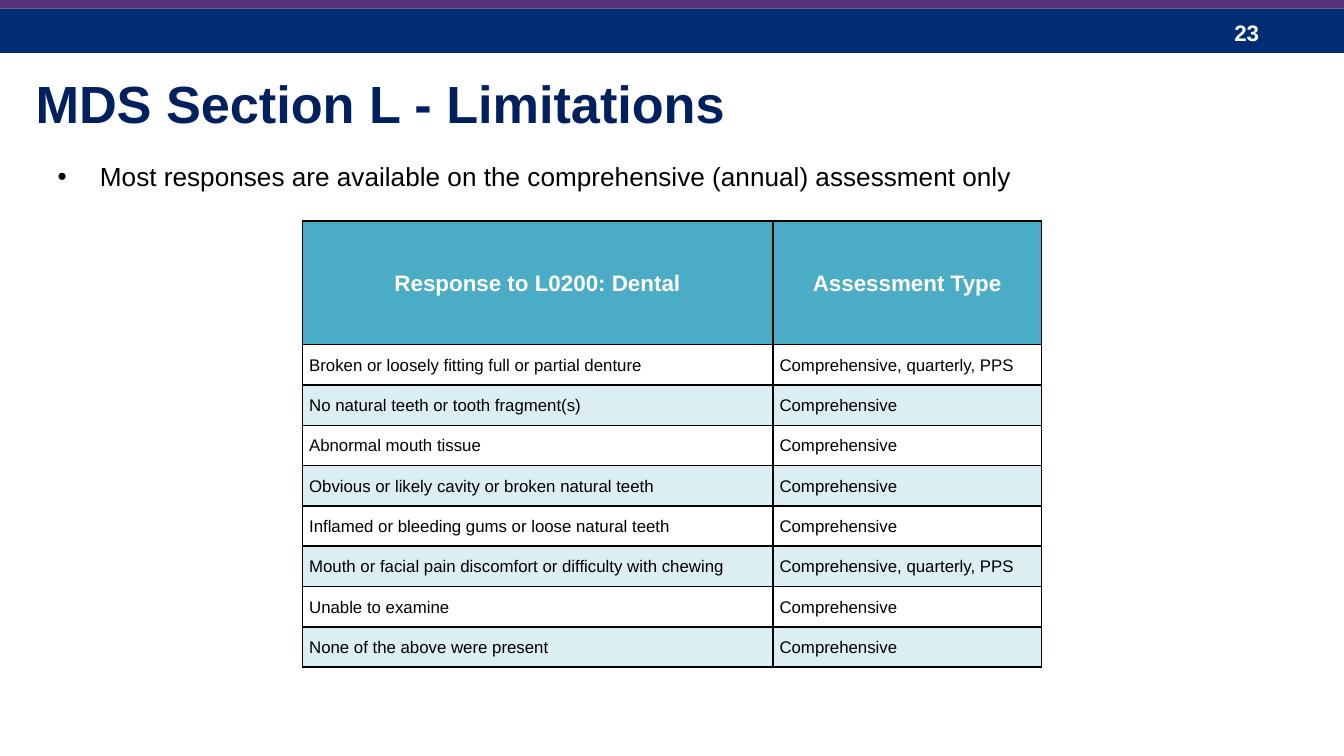
from lxml import etree
from pptx import Presentation
from pptx import util as u
from pptx.dml.color import RGBColor
from pptx.enum import shapes, text
from pptx.oxml import ns

PX = 4572
SLIDE_WIDTH, SLIDE_HEIGHT = 2000, 1125
FONT = "Arial"
WHITE = RGBColor(0xFF, 0xFF, 0xFF)
BLACK = RGBColor(0, 0, 0)
NAVY = RGBColor(0x00, 0x20, 0x60)
BANNER_BLUE = RGBColor(0x00, 0x2D, 0x73)
PURPLE = RGBColor(0x55, 0x32, 0x78)
TEAL = RGBColor(0x4B, 0xAC, 0xC6)
PALE_TEAL = RGBColor(0xDB, 0xEE, 0xF4)

HEADINGS = ("Response to L0200: Dental", "Assessment Type")
ANNUAL = "Comprehensive"
ALL_TYPES = "Comprehensive, quarterly, PPS"
RESPONSES = [
    ("Broken or loosely fitting full or partial denture", ALL_TYPES),
    ("No natural teeth or tooth fragment(s)", ANNUAL),
    ("Abnormal mouth tissue", ANNUAL),
    ("Obvious or likely cavity or broken natural teeth", ANNUAL),
    ("Inflamed or bleeding gums or loose natural teeth", ANNUAL),
    ("Mouth or facial pain discomfort or difficulty with chewing", ALL_TYPES),
    ("Unable to examine", ANNUAL),
    ("None of the above were present", ANNUAL),
]


def px(*lengths):
    return [u.Emu(length * PX) for length in lengths]


def style(paragraph, size, color, bold=False, align=text.PP_ALIGN.LEFT):
    paragraph.alignment = align
    font = paragraph.font
    font.name, font.size, font.bold = FONT, u.Pt(size), bold
    font.color.rgb = color


def add_band(slide, top, height, color):
    band = slide.shapes.add_shape(
        shapes.MSO_SHAPE.RECTANGLE, *px(0, top, SLIDE_WIDTH, height))
    band.shadow.inherit = False
    band.fill.solid()
    band.fill.fore_color.rgb = color
    band.line.fill.background()


def add_title(slide, wording):
    title = slide.shapes.title
    title.left, title.top, title.width, title.height = px(33, 96, 1900, 134)
    frame = title.text_frame
    frame.text = wording
    frame.vertical_anchor = text.MSO_ANCHOR.TOP
    style(frame.paragraphs[0], 28, NAVY, bold=True)


def add_text(slide, box, wording, size, color, bold=False, bullet=False):
    frame = slide.shapes.add_textbox(*px(*box)).text_frame
    frame.word_wrap = True
    frame.vertical_anchor = text.MSO_ANCHOR.MIDDLE
    paragraph = frame.paragraphs[0]
    paragraph.text = wording
    if bullet:
        add_bullet(paragraph)
    style(paragraph, size, color, bold)


def add_bullet(paragraph):
    properties = paragraph._p.get_or_add_pPr()
    indent, = px(63)
    properties.set("marL", str(indent))
    properties.set("indent", str(-indent))
    etree.SubElement(properties, ns.qn("a:buFont"), typeface=FONT)
    etree.SubElement(properties, ns.qn("a:buChar"), char="•")


def add_borders(cell):
    properties = cell._tc.get_or_add_tcPr()
    for side in ("lnL", "lnR", "lnT", "lnB"):
        line = etree.SubElement(properties, ns.qn(f"a:{side}"), w=str(u.Pt(1)))
        fill = etree.SubElement(line, ns.qn("a:solidFill"))
        etree.SubElement(fill, ns.qn("a:srgbClr"), val=str(BLACK))


def fill_cell(cell, wording, color, heading):
    add_borders(cell)
    if color is None:
        cell.fill.background()
    else:
        cell.fill.solid()
        cell.fill.fore_color.rgb = color
    cell.vertical_anchor = text.MSO_ANCHOR.MIDDLE
    cell.margin_left, cell.margin_top, cell.margin_right, cell.margin_bottom = px(
        2 if heading else 10, 2, 2, 0)
    cell.text = wording
    paragraph = cell.text_frame.paragraphs[0]
    if heading:
        style(paragraph, 12, WHITE, bold=True, align=text.PP_ALIGN.CENTER)
    else:
        style(paragraph, 9, BLACK)


def add_response_table(slide):
    rows = [HEADINGS, *RESPONSES]
    table = slide.shapes.add_table(
        len(rows), len(HEADINGS), *px(450, 329, 1100, 664)).table
    table.first_row = table.horz_banding = False
    for column, width in zip(table.columns, px(700, 400)):
        column.width = width
    for index, wordings in enumerate(rows):
        heading = index == 0
        table.rows[index].height, = px(184 if heading else 60)
        band = None if index % 2 else PALE_TEAL
        for cell, wording in zip(table.rows[index].cells, wordings):
            fill_cell(cell, wording, TEAL if heading else band, heading)


def main():
    deck = Presentation()
    deck.slide_width, deck.slide_height = px(SLIDE_WIDTH, SLIDE_HEIGHT)
    slide = deck.slides.add_slide(deck.slide_layouts.get_by_name("Title Only"))
    add_band(slide, 13, 66, BANNER_BLUE)
    add_band(slide, 0, 13, PURPLE)
    add_text(slide, (1817, 19, 150, 60), "23", 12, WHITE, bold=True)
    add_title(slide, "MDS Section L - Limitations")
    add_text(
        slide, (66, 228, 1884, 68),
        "Most responses are available on the comprehensive (annual) assessment only",
        14, BLACK, bullet=True)
    add_response_table(slide)
    deck.save("out.pptx")


if __name__ == "__main__":
    main()
